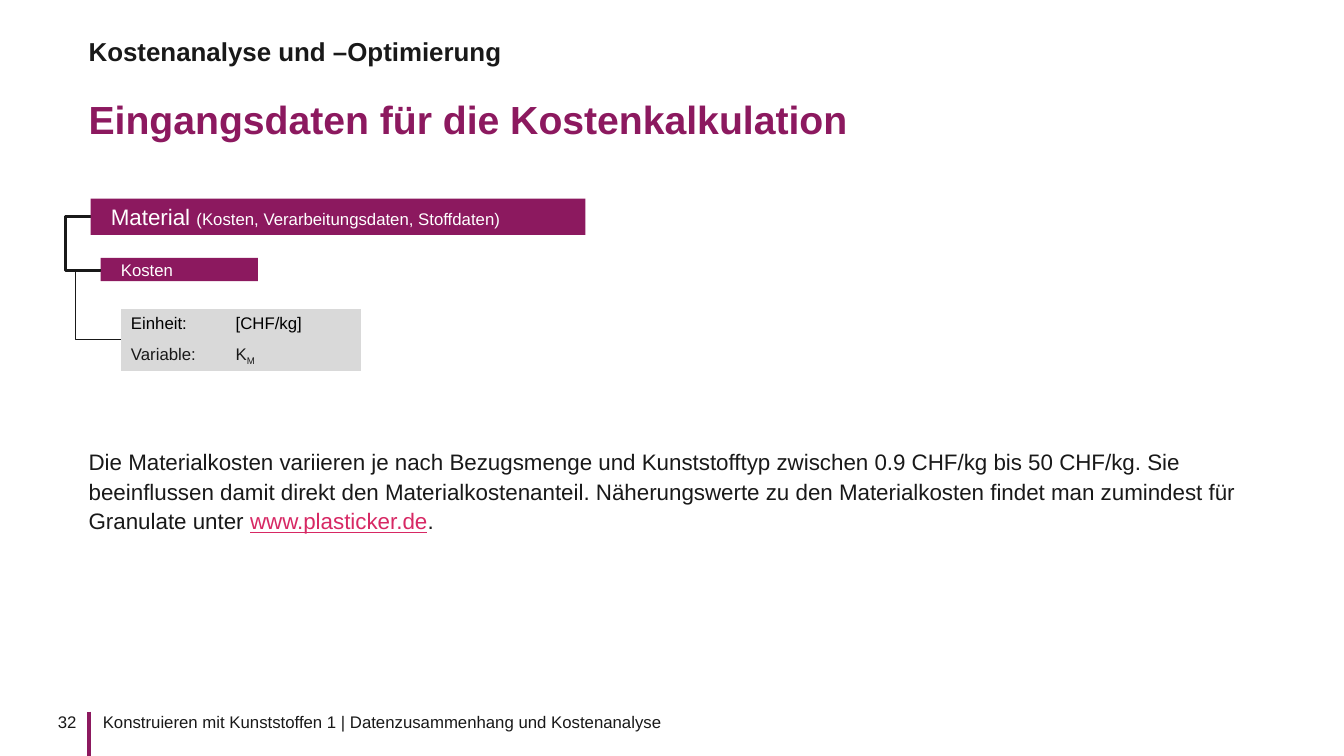
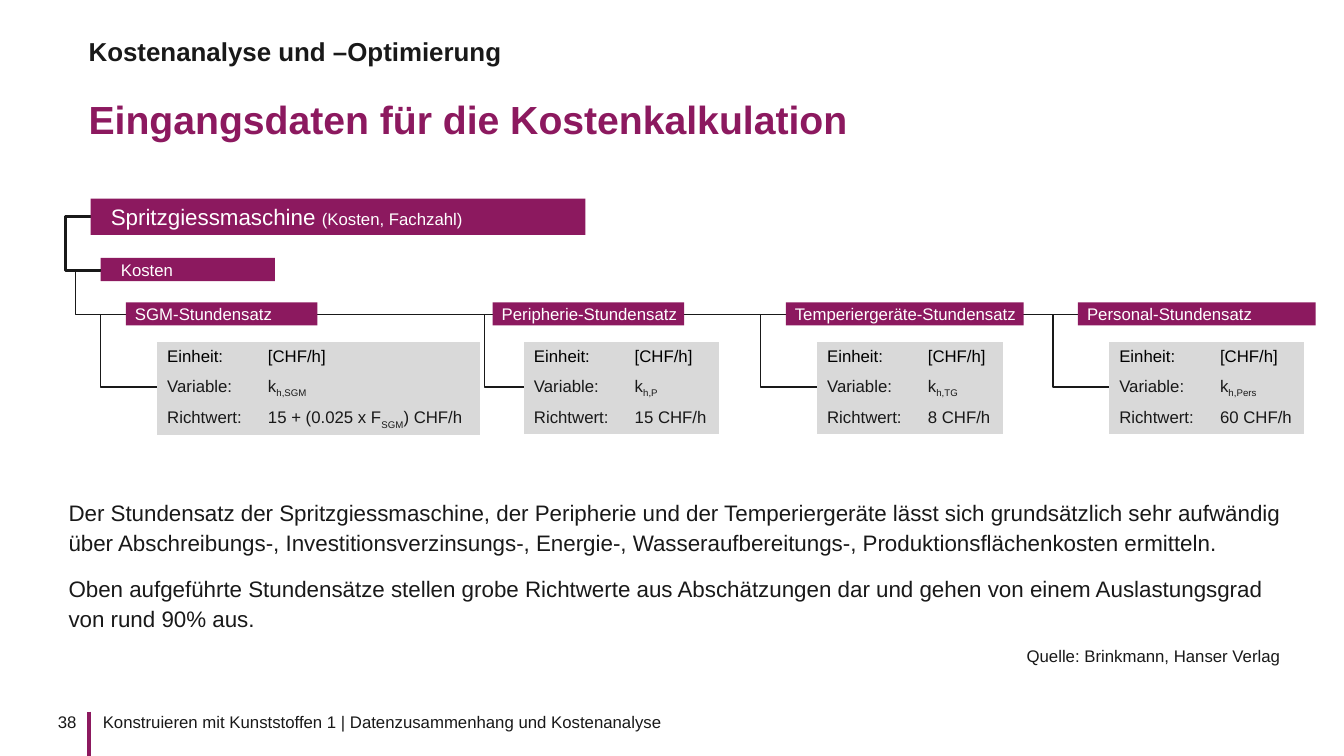
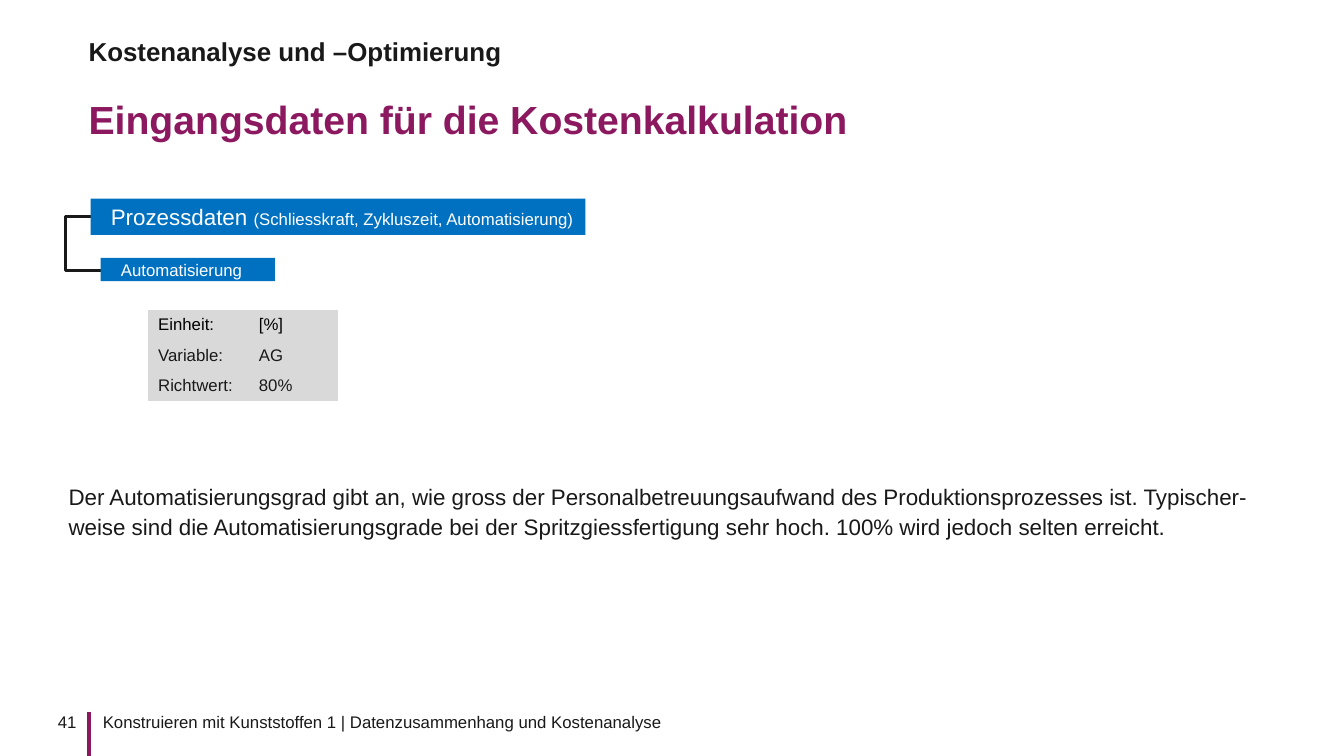
from dataclasses import dataclass
from typing import NamedTuple

from lxml import etree
from pptx import Presentation
from pptx import util as u
from pptx.dml.color import RGBColor
from pptx.enum import shapes, text
from pptx.oxml.ns import qn

PLUM = RGBColor(0x8C, 0x19, 0x5F)
BLUE = RGBColor(0x00, 0x70, 0xC0)
PINK = RGBColor(0xD7, 0x28, 0x64)
INK = RGBColor(0x19, 0x19, 0x19)
BLACK = RGBColor(0x00, 0x00, 0x00)
GREY = RGBColor(0xD9, 0xD9, 0xD9)
WHITE = RGBColor(0xFF, 0xFF, 0xFF)

FONT = "Arial"
PLAIN_TABLE_STYLE = "{2D5ABB26-0587-4C30-8999-92F81FD0307C}"
SECTION = "Kostenanalyse und –Optimierung"
TITLE = "Eingangsdaten für die Kostenkalkulation"
FOOTER = "Konstruieren mit Kunststoffen 1 | Datenzusammenhang und Kostenanalyse"

TOPIC_Y, BRANCH_Y, RATE_Y = 2.15, 2.68, 3.12  # centre lines of the tree levels
TABLE_INDENT = 0.31
ROW_HEIGHT = 0.3


class Box(NamedTuple):
    left: float
    top: float
    width: float
    height: float

    def lengths(self) -> list[u.Length]:
        return [u.Inches(value) for value in self]


class Run(NamedTuple):
    text: str
    format: dict = {}
    subscript: bool = False


Paragraphs = list[list[Run]]


@dataclass
class DataTable:
    """Rows of label and value; every second part of a value is a subscript."""
    left: float
    top: float
    widths: tuple[float, float]
    rows: list[tuple[str, ...]]


@dataclass
class Rate:
    """An hourly rate with its bar and table on the third tree level."""
    name: str
    left: float
    width: float
    value_width: float
    variable: str
    guide_value: tuple[str, ...]
    stub: float = 0.25

    def table(self) -> DataTable:
        rows = [("Einheit:", "[CHF/h]"), ("Variable:", "k", self.variable),
                ("Richtwert:", *self.guide_value)]
        return DataTable(self.left + TABLE_INDENT, 3.39, (1, self.value_width), rows)


@dataclass
class Page:
    number: int
    color: RGBColor
    topic: str
    details: str
    branch: str
    branch_width: float
    body: Box
    paragraphs: Paragraphs


def write(frame, paragraphs: Paragraphs, base: dict, layout: dict | None = None,
          space_before: float = 0) -> None:
    """Fill a text frame; base formats all runs, layout all paragraphs."""
    for index, runs in enumerate(paragraphs):
        paragraph = frame.paragraphs[0] if index == 0 else frame.add_paragraph()
        for name, value in (layout or {}).items():
            setattr(paragraph, name, value)
        paragraph.space_before = u.Pt(space_before if index else 0)
        for item in runs:
            run = paragraph.add_run()
            run.text = item.text
            format_values = {"name": FONT, "color": INK, **base, **item.format}
            run.font.color.rgb = format_values.pop("color")
            for name, value in format_values.items():
                setattr(run.font, name, value)
            if item.subscript:
                run._r.get_or_add_rPr().set("baseline", "-25000")


def set_frame(frame, anchor, left: float = 0, right: float = 0) -> None:
    values = {
        "word_wrap": True, "auto_size": text.MSO_AUTO_SIZE.NONE,
        "vertical_anchor": anchor,
        "margin_left": u.Inches(left), "margin_right": u.Inches(right),
        "margin_top": 0, "margin_bottom": 0,
    }
    for name, value in values.items():
        setattr(frame, name, value)


def add_text(slide, box: Box, paragraphs: Paragraphs, base: dict,
             layout: dict | None = None, anchor=text.MSO_ANCHOR.TOP,
             space_before: float = 0) -> None:
    frame = slide.shapes.add_textbox(*box.lengths()).text_frame
    set_frame(frame, anchor)
    write(frame, paragraphs, base, layout, space_before)


def add_bar(slide, box: Box, color: RGBColor, runs: list[Run], indent: float) -> None:
    bar = slide.shapes.add_shape(shapes.MSO_SHAPE.RECTANGLE, *box.lengths())
    bar.shadow.inherit = False
    bar.fill.solid()
    bar.fill.fore_color.rgb = color
    bar.line.fill.background()
    set_frame(bar.text_frame, text.MSO_ANCHOR.MIDDLE, left=indent)
    write(bar.text_frame, [runs], {"size": u.Pt(12), "color": WHITE},
          {"alignment": text.PP_ALIGN.LEFT})


def add_line(slide, start: tuple[float, float], end: tuple[float, float],
             width: float, color: RGBColor = INK, bend_x: float | None = None) -> None:
    """Draw a straight line, or an elbow whose upright part stands at bend_x."""
    kind = shapes.MSO_CONNECTOR.STRAIGHT if bend_x is None else shapes.MSO_CONNECTOR.ELBOW
    line = slide.shapes.add_connector(kind, *[u.Inches(v) for v in (*start, *end)])
    line.line.color.rgb = color
    line.line.width = u.Pt(width)
    properties = line._element.spPr
    etree.SubElement(properties, qn("a:effectLst"))
    if bend_x is not None:
        share = (bend_x - start[0]) / (end[0] - start[0])
        guides = properties.find(qn("a:prstGeom")).get_or_add_avLst()
        etree.SubElement(guides, qn("a:gd"), name="adj1",
                         fmla=f"val {round(share * 100000)}")


def add_data_table(slide, data: DataTable) -> None:
    box = Box(data.left, data.top, sum(data.widths), ROW_HEIGHT * len(data.rows))
    frame = slide.shapes.add_table(len(data.rows), 2, *box.lengths())
    table = frame.table
    table.first_row = table.horz_banding = False
    table._tbl.tblPr.find(qn("a:tableStyleId")).text = PLAIN_TABLE_STYLE
    for column, width in zip(table.columns, data.widths):
        column.width = u.Inches(width)
    for row_index, (label, *value) in enumerate(data.rows):
        table.rows[row_index].height = u.Inches(ROW_HEIGHT)
        parts = [Run(part, subscript=i % 2 == 1) for i, part in enumerate(value)]
        for column_index, runs in enumerate(([Run(label)], parts)):
            cell = table.cell(row_index, column_index)
            cell.fill.solid()
            cell.fill.fore_color.rgb = GREY
            color = INK if row_index else BLACK
            write(cell.text_frame, [runs], {"size": u.Pt(12), "color": color})


def add_page(presentation, page: Page):
    """Add a slide with title, footer, the two upper tree levels and the body."""
    slide = presentation.slides.add_slide(presentation.slide_layouts[5])

    # Section and title
    title = slide.shapes.title
    title.left, title.top, title.width, title.height = Box(0.88, 0.76, 12.09, 0.75).lengths()
    set_frame(title.text_frame, text.MSO_ANCHOR.MIDDLE)
    write(title.text_frame, [[Run(TITLE)]],
          {"size": u.Pt(28), "bold": True, "color": PLUM},
          {"alignment": text.PP_ALIGN.LEFT, "line_spacing": 1.2})
    add_text(slide, Box(0.88, 0.37, 12.09, 0.31), [[Run(SECTION)]],
             {"size": u.Pt(18.5), "bold": True}, {"line_spacing": 0.9},
             text.MSO_ANCHOR.MIDDLE)

    # Footer
    small = {"size": u.Pt(12)}
    add_line(slide, (0.88, 7.06), (0.88, 7.5), 3, PLUM)
    add_text(slide, Box(1.02, 7.06, 5.75, 0.36), [[Run(FOOTER)]], small)
    add_text(slide, Box(0.29, 7.06, 0.47, 0.2), [[Run(str(page.number))]], small,
             {"alignment": text.PP_ALIGN.RIGHT})

    # Topic and branch
    add_line(slide, (0.9, TOPIC_Y), (1, BRANCH_Y), 2, bend_x=0.65)
    add_bar(slide, Box(0.9, 1.97, 4.91, 0.36), page.color,
            [Run(page.topic + " ", {"size": u.Pt(16)}), Run(page.details)], 0.2)
    add_bar(slide, Box(1, 2.56, page.branch_width, 0.23), page.color,
            [Run(page.branch)], 0.2)

    # Body
    add_text(slide, page.body, page.paragraphs, {"size": u.Pt(16)},
             {"line_spacing": 1.1}, space_before=12)
    return slide


MATERIAL = Page(
    32, PLUM, "Material", "(Kosten, Verarbeitungsdaten, Stoffdaten)", "Kosten", 1.56,
    Box(0.88, 4.42, 12.09, 1.2),
    [[Run("Die Materialkosten variieren je nach Bezugsmenge und Kunststofftyp zwischen "
          "0.9 CHF/kg bis 50 CHF/kg. Sie beeinflussen damit direkt den "
          "Materialkostenanteil. Näherungswerte zu den Materialkosten findet man "
          "zumindest für Granulate unter "),
      Run("www.plasticker.de", {"color": PINK, "underline": True}),
      Run(".")]])

MACHINE = Page(
    38, PLUM, "Spritzgiessmaschine", "(Kosten, Fachzahl)", "Kosten", 1.73,
    Box(0.68, 4.93, 12.09, 1.4),
    [[Run("Der Stundensatz der Spritzgiessmaschine, der Peripherie und der "
          "Temperiergeräte lässt sich grundsätzlich sehr aufwändig über "
          "Abschreibungs-, Investitionsverzinsungs-, Energie-, "
          "Wasseraufbereitungs-, Produktionsflächenkosten ermitteln.")],
     [Run("Oben aufgeführte Stundensätze stellen grobe Richtwerte aus Abschätzungen "
          "dar und gehen von einem Auslastungsgrad von rund 90% aus.")]])

PROCESS = Page(
    41, BLUE, "Prozessdaten", "(Schliesskraft, Zykluszeit, Automatisierung)",
    "Automatisierung", 1.73, Box(0.68, 4.77, 12.09, 0.8),
    [[Run("Der Automatisierungsgrad gibt an, wie gross der Personalbetreuungsaufwand "
          "des Produktionsprozesses ist. Typischer-weise sind die "
          "Automatisierungsgrade bei der Spritzgiessfertigung sehr hoch. 100% wird "
          "jedoch selten erreicht.")]])

RATES = [
    Rate("SGM-Stundensatz", 1.25, 1.9, 2.2, "h,SGM", ("15 + (0.025 x F", "SGM", ") CHF/h")),
    Rate("Peripherie-Stundensatz", 4.89, 1.9, 0.94, "h,P", ("15 CHF/h",), stub=0.08),
    Rate("Temperiergeräte-Stundensatz", 7.8, 2.36, 0.85, "h,TG", ("8 CHF/h",)),
    Rate("Personal-Stundensatz", 10.7, 2.36, 0.93, "h,Pers", ("60 CHF/h",)),
]


def main() -> None:
    presentation = Presentation()
    presentation.slide_width = u.Inches(13.34)
    presentation.slide_height = u.Inches(7.5)

    # Material costs
    slide = add_page(presentation, MATERIAL)
    add_line(slide, (1, BRANCH_Y), (1.2, 3.37), 1, bend_x=0.75)
    add_data_table(slide, DataTable(1.2, 3.07, (1.04, 1.34), [
        ("Einheit:", "[CHF/kg]"), ("Variable:", "K", "M")]))

    # Hourly rates of the machine
    slide = add_page(presentation, MACHINE)
    add_line(slide, (1, BRANCH_Y), (RATES[0].left, RATE_Y), 1, bend_x=0.75)
    add_line(slide, (3.15, RATE_Y), (11.88, RATE_Y), 1)
    for rate in RATES:
        data = rate.table()
        add_line(slide, (rate.left, RATE_Y), (data.left, 3.84), 1,
                 bend_x=rate.left - rate.stub)
        add_bar(slide, Box(rate.left, 3, rate.width, 0.23), PLUM, [Run(rate.name)], 0.09)
        add_data_table(slide, data)
    add_text(slide, Box(10.19, 6.41, 2.66, 0.2),
             [[Run("Quelle: Brinkmann, Hanser Verlag")]], {"size": u.Pt(12)})

    # Degree of automation
    slide = add_page(presentation, PROCESS)
    add_data_table(slide, DataTable(1.47, 3.08, (1, 0.89), [
        ("Einheit:", "[%]"), ("Variable:", "AG"), ("Richtwert:", "80%")]))

    presentation.save("out.pptx")


if __name__ == "__main__":
    main()
